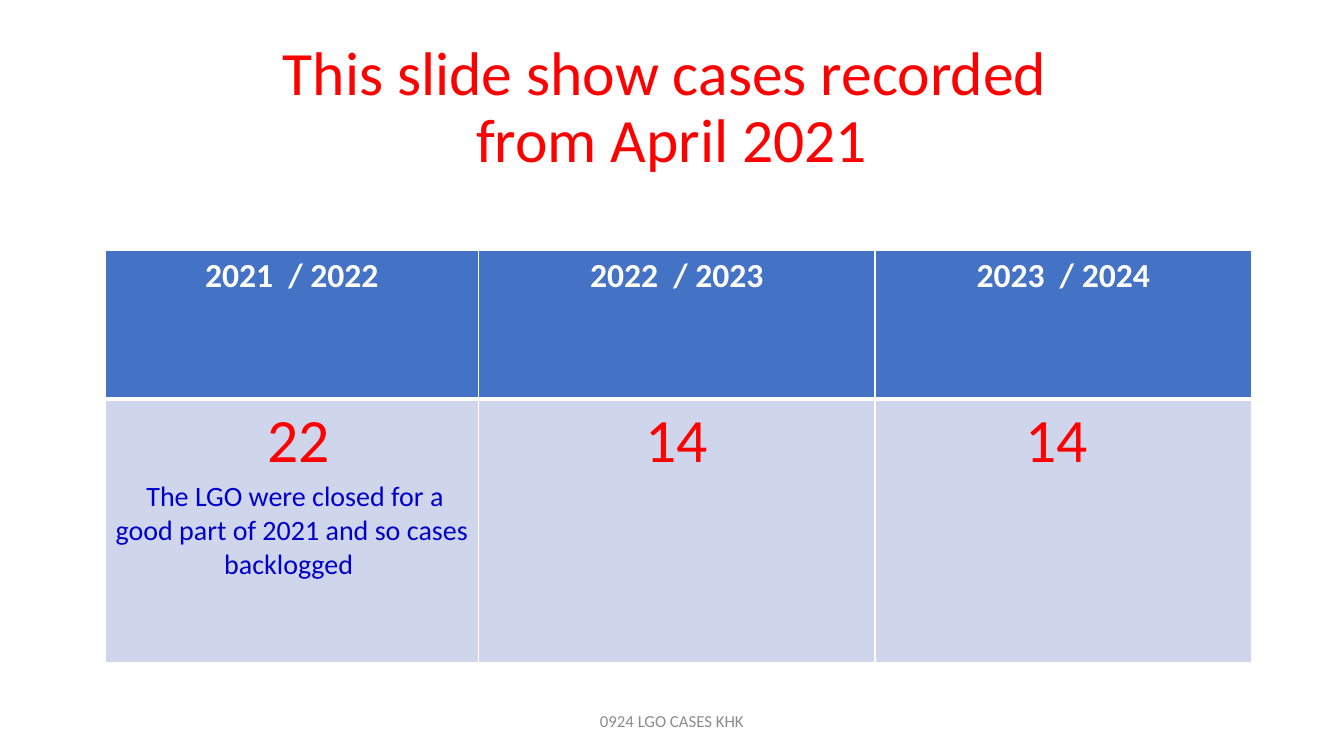
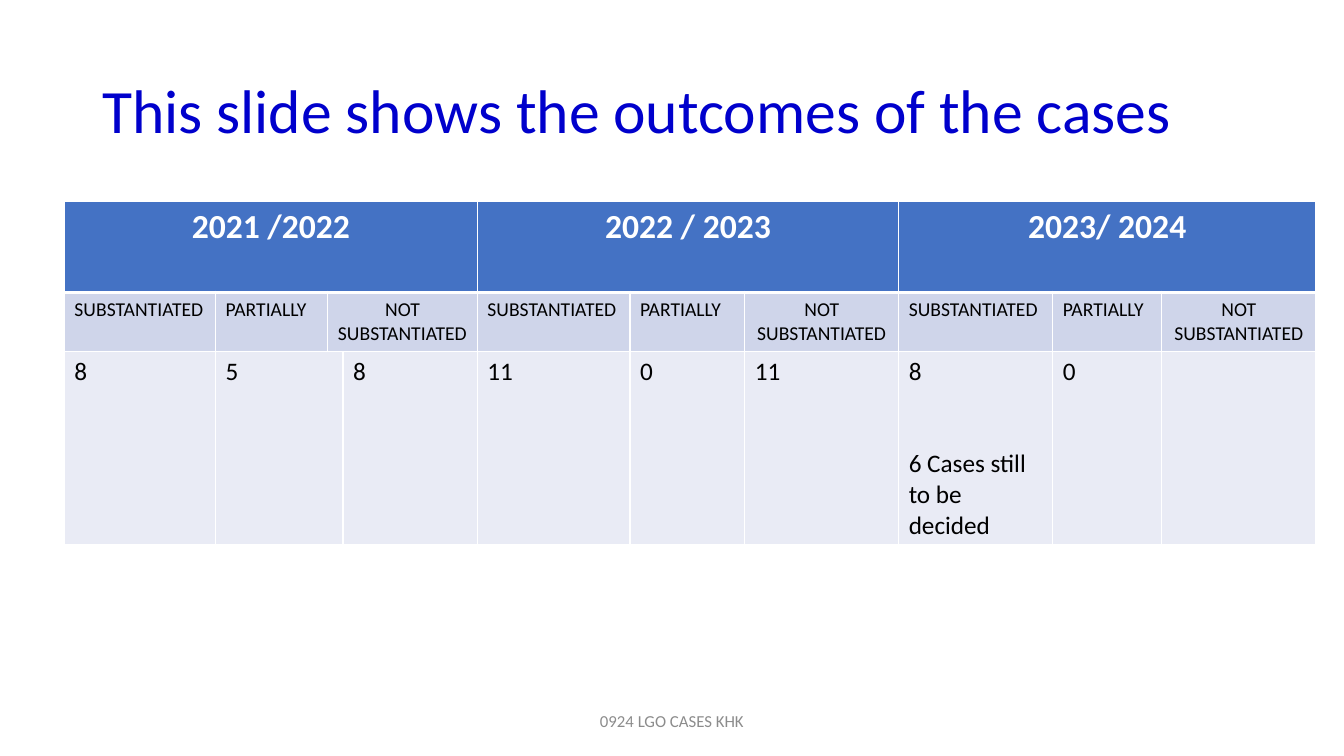
import pptx
import pptx.util
import pptx.dml.color
import pptx.enum.text
import pptx.oxml

Pt = pptx.util.Pt
LEFT = pptx.enum.text.PP_ALIGN.LEFT
CENTER = pptx.enum.text.PP_ALIGN.CENTER
FONT = "Calibri"
FOOTER = "0924 LGO CASES KHK"
COLORS = {
    "red": "FF0000",
    "blue": "0000CC",
    "black": "000000",
    "white": "FFFFFF",
    "gray": "8C8C8C",
    "header": "4472C4",
    "band": "CFD5EA",
    "pale": "E9EBF5",
}
BORDER = (
    '<a:{side} xmlns:a="http://schemas.openxmlformats.org/drawingml/2006/main" w="{width}">'
    '<a:solidFill><a:srgbClr val="{color}"/></a:solidFill></a:{side}>'
)


def write(paragraph, text, size, color, align, bold=False):
    paragraph.text = text
    paragraph.alignment = align
    paragraph.font.name = FONT
    paragraph.font.size = Pt(size)
    paragraph.font.bold = bold
    paragraph.font.color.rgb = pptx.dml.color.RGBColor.from_string(COLORS[color])


def add_text(slide, box, text, size, color, align):
    shape = slide.shapes.add_textbox(*(Pt(length) for length in box))
    shape.text_frame.word_wrap = True
    shape.text_frame.vertical_anchor = pptx.enum.text.MSO_ANCHOR.MIDDLE
    paragraph = shape.text_frame.paragraphs[0]
    write(paragraph, text, size, color, align)
    return paragraph


year_labels = [
    ("SUBSTANTIATED", LEFT),
    ("PARTIALLY", LEFT),
    ("NOT SUBSTANTIATED", CENTER),
]
outcome_columns = [0, 1, 2, 4, 5, 6, 7, 8, 9]
outcomes = ["8", "5", "8", "11", "0", "11", "8", "0"]
value_columns = [0, 1, 3, 4, 5, 6, 7, 8]

slides = [
    {
        "title": ("This slide show cases recorded \vfrom April 2021", "red", CENTER, 26),
        "origin": (75, 179),
        "widths": [267, 283, 269],
        "heights": [106, 188],
        "fills": ["header", "band"],
        "merges": [],
        "texts": [
            (0, column, year, 24, "white", CENTER)
            for column, year in enumerate(["2021  / 2022", "2022  / 2023", "2023  / 2024"])
        ] + [
            (1, column, count, 44, "red", CENTER)
            for column, count in enumerate([" 22", "14", "14 "])
        ],
        "note": (
            1, 0,
            " The LGO were closed for a good part of 2021 and so cases backlogged ",
            20, "blue", CENTER, 0,
        ),
    },
    {
        "title": ("This slide shows the outcomes of the cases", "blue", LEFT, 29),
        "origin": (46, 144),
        "widths": [108, 80, 11, 96, 109, 82, 110, 110, 78, 110],
        "heights": [65, 42, 138],
        "fills": ["header", "band", "pale"],
        "merges": [(0, 0, 3), (0, 4, 6), (0, 7, 9), (1, 2, 3), (2, 1, 2)],
        "texts": [
            (0, column, year, 24, "white", CENTER)
            for column, year in [(0, "2021 /2022"), (4, "2022 / 2023"), (7, "2023/ 2024")]
        ] + [
            (1, column, label, 14, "black", align)
            for column, (label, align) in zip(outcome_columns, year_labels * 3)
        ] + [
            (2, column, count, 18, "black", LEFT)
            for column, count in zip(value_columns, outcomes)
        ],
        "note": (2, 7, "6 Cases still to be decided", 18, "black", LEFT, 44),
    },
]

presentation = pptx.Presentation()
presentation.slide_width = Pt(960)
presentation.slide_height = Pt(540)

for content in slides:
    slide = presentation.slides.add_slide(presentation.slide_layouts[6])
    title, color, align, top = content["title"]
    paragraph = add_text(slide, (66, top, 828, 104), title, 44, color, align)
    paragraph.line_spacing = 0.9

    widths, heights = content["widths"], content["heights"]
    left, top = content["origin"]
    table = slide.shapes.add_table(
        len(heights), len(widths), Pt(left), Pt(top), Pt(sum(widths)), Pt(sum(heights))
    ).table
    for column, width in zip(table.columns, widths):
        column.width = Pt(width)
    for index, (row, height, fill) in enumerate(zip(table.rows, heights, content["fills"])):
        row.height = Pt(height)
        border_widths = {
            "lnL": 1,
            "lnR": 1,
            "lnT": 3 if index == 1 else 1,
            "lnB": 3 if index == 0 else 1,
        }
        for cell in row.cells:
            properties = cell._tc.get_or_add_tcPr()
            for side, width in border_widths.items():
                properties.append(pptx.oxml.parse_xml(
                    BORDER.format(side=side, width=Pt(width), color=COLORS["white"])
                ))
            cell.fill.solid()
            cell.fill.fore_color.rgb = pptx.dml.color.RGBColor.from_string(COLORS[fill])
    for row, first, last in content["merges"]:
        table.cell(row, first).merge(table.cell(row, last))
    for row, column, text, size, color, align in content["texts"]:
        paragraph = table.cell(row, column).text_frame.paragraphs[0]
        write(paragraph, text, size, color, align, bold=row == 0)

    row, column, text, size, color, align, gap = content["note"]
    paragraph = table.cell(row, column).text_frame.add_paragraph()
    write(paragraph, text, size, color, align)
    paragraph.space_before = Pt(gap)

    add_text(slide, (318, 500.5, 324, 29), FOOTER, 12, "gray", CENTER)

presentation.save("out.pptx")
